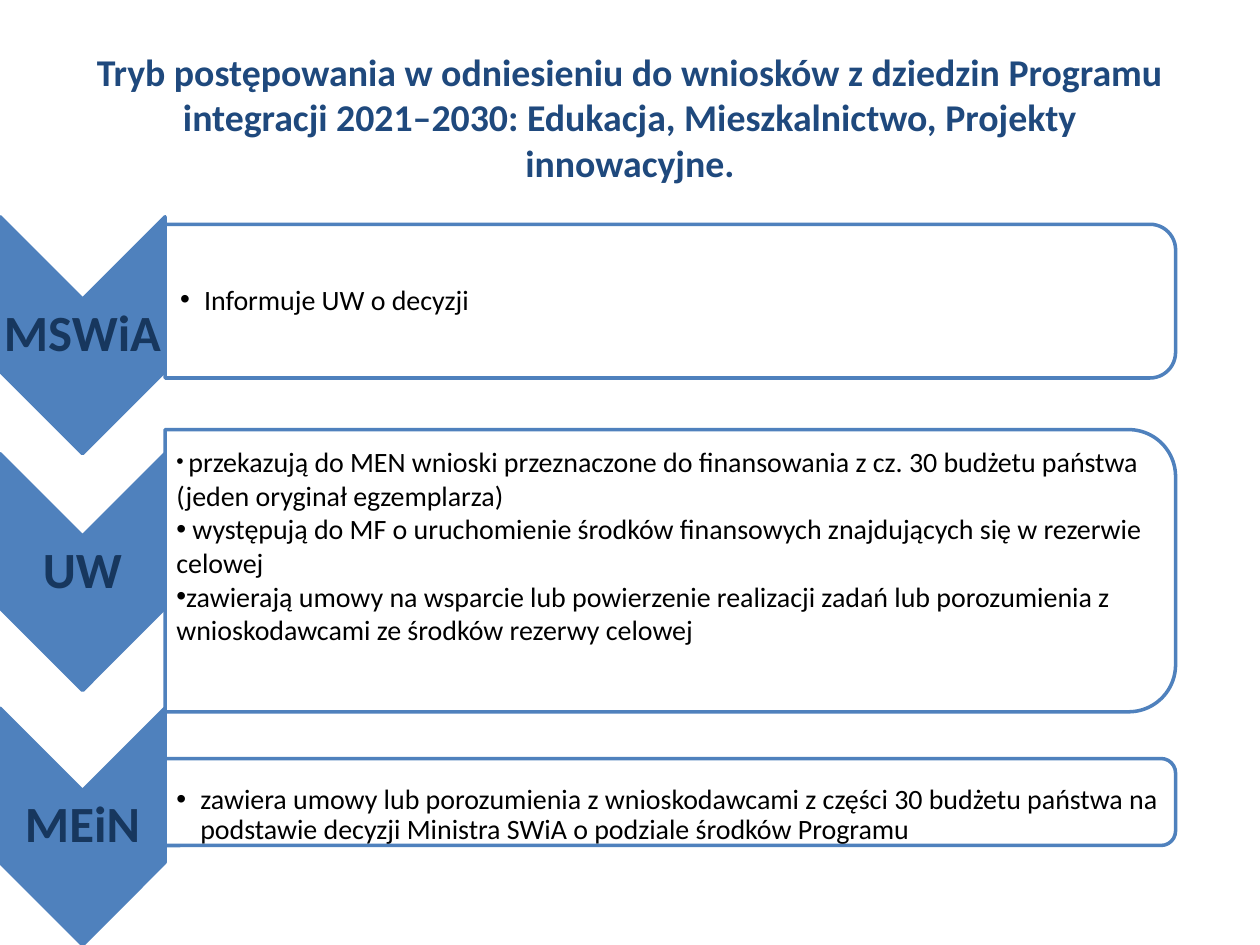
from dataclasses import dataclass

from lxml.etree import SubElement
from pptx import Presentation
from pptx.dml.color import RGBColor
from pptx.enum.shapes import MSO_SHAPE
from pptx.enum.text import MSO_ANCHOR, PP_ALIGN
from pptx.oxml.ns import qn
from pptx.util import Inches, Pt


@dataclass(frozen=True)
class Theme:
    font: str = "Calibri"
    title_color: str = "1F497D"
    label_color: str = "17375E"
    body_color: str = "000000"
    accent: str = "4F81BD"
    panel: str = "FFFFFF"
    title_size: float = 21.6
    label_size: float = 29
    body_size: float = 16
    small_size: float = 12
    line_width: float = 2


COLUMN_WIDTH = 1.31
CHEVRON_HEIGHT = 1.88
LABEL_HEIGHT = 0.56
PANEL_WIDTH = 8.02

TITLE = ("Tryb postępowania w odniesieniu do wniosków z dziedzin Programu "
         "integracji 2021–2030: Edukacja, Mieszkalnictwo, Projekty innowacyjne.")


def add_run(paragraph, text, *, font, size, color, bold=False):
    run = paragraph.add_run()
    run.text = text
    run.font.name = font
    run.font.size = Pt(size)
    run.font.bold = bold
    run.font.color.rgb = RGBColor.from_string(color)


def set_bullet(paragraph, indent):
    """Give the paragraph a round bullet with a hanging indent in inches."""
    properties = paragraph._p.get_or_add_pPr()
    properties.set("marL", str(Inches(indent)))
    properties.set("indent", str(-Inches(indent)))
    SubElement(properties, qn("a:buFont"), typeface="Arial")
    SubElement(properties, qn("a:buChar"), char="•")


class SlideBuilder:
    def __init__(self, slide, theme):
        self.slide = slide
        self.theme = theme

    def text_frame(self, left, top, width, height, insets, anchor=MSO_ANCHOR.MIDDLE):
        box = self.slide.shapes.add_textbox(
            Inches(left), Inches(top), Inches(width), Inches(height))
        frame = box.text_frame
        frame.word_wrap = True
        frame.vertical_anchor = anchor
        (frame.margin_left, frame.margin_top,
         frame.margin_right, frame.margin_bottom) = map(Inches, insets)
        return frame

    def title(self, text):
        frame = self.text_frame(0.5, 0.3, 9, 1.25, (0.1, 0.05, 0.1, 0.05))
        paragraph = frame.paragraphs[0]
        paragraph.alignment = PP_ALIGN.CENTER
        add_run(paragraph, text, font=self.theme.font, size=self.theme.title_size,
                color=self.theme.title_color, bold=True)

    def turned_shape(self, kind, left, top, width, height, fill):
        """Add a shape turned a quarter clockwise that covers the given area."""
        shape = self.slide.shapes.add_shape(
            kind, Inches(left + (width - height) / 2),
            Inches(top + (height - width) / 2), Inches(height), Inches(width))
        shape.rotation = 90
        shape.shadow.inherit = False
        shape.fill.solid()
        shape.fill.fore_color.rgb = RGBColor.from_string(fill)
        shape.line.color.rgb = RGBColor.from_string(self.theme.accent)
        shape.line.width = Pt(self.theme.line_width)
        return shape

    def chevron(self, center, text):
        self.turned_shape(MSO_SHAPE.CHEVRON, 0, center - CHEVRON_HEIGHT / 2,
                          COLUMN_WIDTH, CHEVRON_HEIGHT, self.theme.accent)
        frame = self.text_frame(0, center - LABEL_HEIGHT / 2, COLUMN_WIDTH,
                                LABEL_HEIGHT, (0.02,) * 4)
        paragraph = frame.paragraphs[0]
        paragraph.alignment = PP_ALIGN.CENTER
        paragraph.line_spacing = 0.9
        add_run(paragraph, text, font=self.theme.font, size=self.theme.label_size,
                color=self.theme.label_color, bold=True)

    def panel(self, top, height):
        shape = self.turned_shape(MSO_SHAPE.ROUND_2_SAME_RECTANGLE, COLUMN_WIDTH, top,
                                  PANEL_WIDTH, height, self.theme.panel)
        color = shape.fill._xPr.find(qn("a:solidFill"))[0]
        SubElement(color, qn("a:alpha"), val="90000")

    def bullets(self, area, items, *, anchor, inset, indent, spacing):
        """Each item is a list of (text, size) runs."""
        frame = self.text_frame(*area, (inset, 0.01, 0.01, 0.01), anchor)
        for index, runs in enumerate(items):
            paragraph = frame.add_paragraph() if index else frame.paragraphs[0]
            paragraph.line_spacing = spacing
            set_bullet(paragraph, indent)
            for text, size in runs:
                add_run(paragraph, text, font=self.theme.font, size=size,
                        color=self.theme.body_color)


def main():
    theme = Theme()
    body, small = theme.body_size, theme.small_size
    presentation = Presentation()
    presentation.slide_width = Inches(10)
    presentation.slide_height = Inches(7.5)
    slide = presentation.slides.add_slide(presentation.slide_layouts[6])
    builder = SlideBuilder(slide, theme)
    builder.title(TITLE)

    # Label, chevron centre, panel top and height, text area, bullets, text format
    steps = [
        ("MSWiA", 2.66, 1.78, 1.22, (COLUMN_WIDTH, 1.84, 7.96, 1.1),
         [[("Informuje UW o decyzji", body)]],
         dict(anchor=MSO_ANCHOR.MIDDLE, inset=0.12, indent=0.19, spacing=0.9)),
        ("UW", 4.54, 3.41, 2.24, (COLUMN_WIDTH, 3.52, 7.91, 2.02),
         [[(" ", small),
           ("przekazują do MEN wnioski przeznaczone do finansowania z cz. 30 "
            "budżetu państwa (jeden oryginał egzemplarza)", body)],
          [(" występują do MF o uruchomienie środków finansowych znajdujących "
            "się w rezerwie celowej", body)],
          [("zawierają umowy na wsparcie lub powierzenie realizacji zadań lub "
            "porozumienia z wnioskodawcami ze środków rezerwy celowej", body)]],
         dict(anchor=MSO_ANCHOR.TOP, inset=0.09, indent=0, spacing=1.0)),
        ("MEiN", 6.56, 6.02, 0.69, (COLUMN_WIDTH, 6.07, 7.98, 0.65),
         [[("zawiera umowy lub porozumienia z wnioskodawcami z części 30 budżetu "
            "państwa na podstawie decyzji Ministra SWiA o podziale środków Programu",
            body)]],
         dict(anchor=MSO_ANCHOR.BOTTOM, inset=0.09, indent=0.19, spacing=0.9)),
    ]
    for label, center, top, height, area, items, text_format in steps:
        builder.chevron(center, label)
        builder.panel(top, height)
        builder.bullets(area, items, **text_format)

    presentation.save("out.pptx")


if __name__ == "__main__":
    main()
